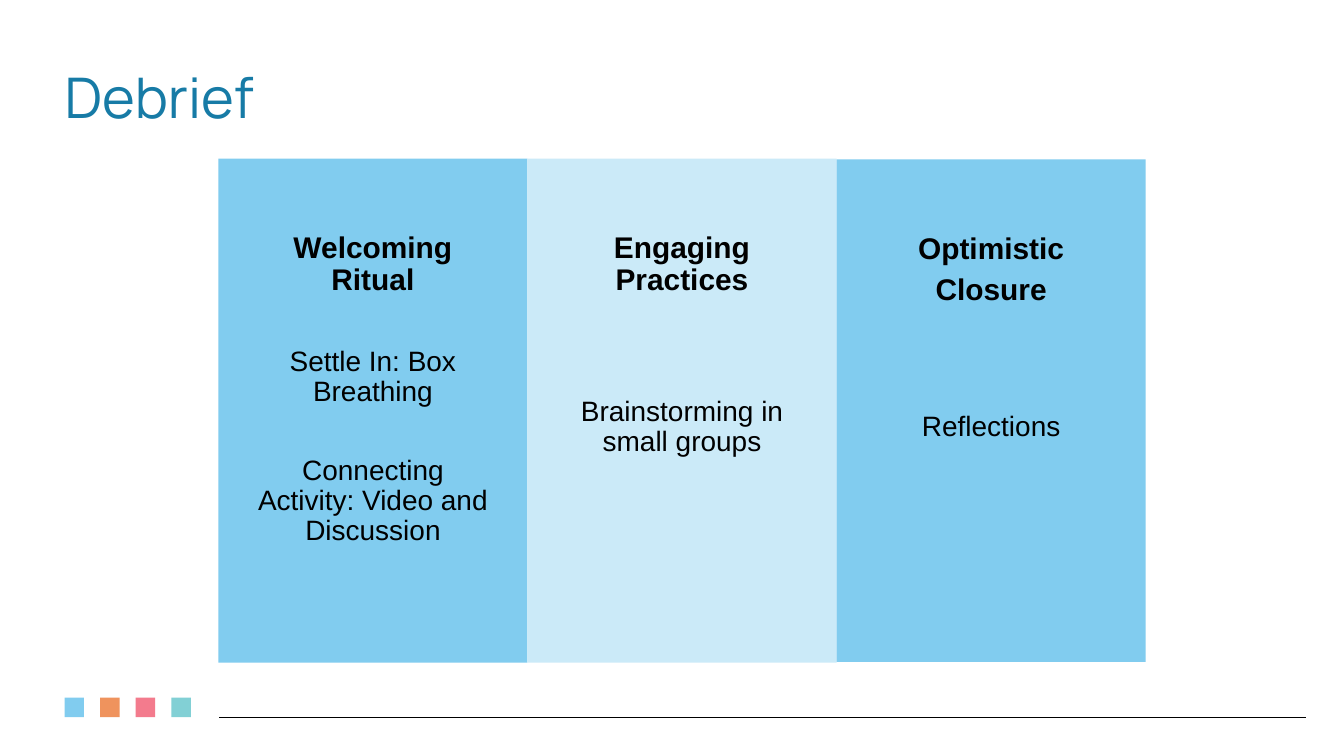
import pptx
import pptx.util
import pptx.dml.color
import pptx.enum.shapes
import pptx.enum.text
import pptx.oxml.ns
from lxml import etree

RGBColor = pptx.dml.color.RGBColor
Pt = pptx.util.Pt
ALIGN = pptx.enum.text.PP_ALIGN
ANCHOR = pptx.enum.text.MSO_ANCHOR
RECTANGLE = pptx.enum.shapes.MSO_SHAPE.RECTANGLE

EMU_PER_PX = 9144  # 100 px to the inch

BLACK = RGBColor(0x00, 0x00, 0x00)
TITLE_BLUE = RGBColor(0x17, 0x7B, 0xA6)
SKY = RGBColor(0x81, 0xCC, 0xEF)
PALE_SKY = RGBColor(0xCB, 0xEA, 0xF8)
ORANGE = RGBColor(0xEF, 0x93, 0x5D)
PINK = RGBColor(0xF3, 0x7B, 0x8D)
TEAL = RGBColor(0x82, 0xD0, 0xD5)

COLUMN_WIDTH = 460
# Fill, top, height, top inset, heading paragraphs, body paragraphs, gap in points
COLUMNS = [
    (SKY, 236, 750, 159, ["Welcoming Ritual"],
     ["Settle In: Box Breathing", "Connecting Activity: Video and Discussion"], 52),
    (PALE_SKY, 236, 750, 100, ["Engaging Practices"],
     ["Brainstorming in small groups"], 10),
    (SKY, 237, 748, 100, ["Optimistic", "Closure"], ["Reflections"], 10),
]


def px(length):
    return pptx.util.Emu(length * EMU_PER_PX)


def write_text(shape, paragraphs, size, color=BLACK, font="Arial", bold=False,
               align=ALIGN.CENTER, anchor=ANCHOR.TOP, insets=(0, 0, 0, 0), gap=10):
    """Insets are left, top, right, bottom in px; gap is in points."""
    frame = shape.text_frame
    frame.word_wrap = True
    frame.auto_size = pptx.enum.text.MSO_AUTO_SIZE.NONE
    frame.vertical_anchor = anchor
    (frame.margin_left, frame.margin_top,
     frame.margin_right, frame.margin_bottom) = map(px, insets)
    for index, text in enumerate(paragraphs):
        para = frame.add_paragraph() if index else frame.paragraphs[0]
        para.alignment = align
        para.line_spacing = 0.9
        para.space_before = Pt(gap if index else 0)
        span = para.add_run()
        span.text = text
        span.font.size = Pt(size)
        span.font.name = font
        span.font.bold = bold
        span.font.color.rgb = color


def add_rectangle(page, left, top, width, height, color):
    shape = page.shapes.add_shape(RECTANGLE, px(left), px(top), px(width), px(height))
    shape.shadow.inherit = False
    shape.fill.solid()
    shape.fill.fore_color.rgb = color
    shape.line.fill.background()
    return shape


def add_footer(page, left, top, width):
    """Four coloured squares followed by a thin rule."""
    side, pitch, rule_offset = 29, 53, 230
    for index, color in enumerate([SKY, ORANGE, PINK, TEAL]):
        add_rectangle(page, left + index * pitch, top, side, side, color)
    rule = page.shapes.add_connector(
        pptx.enum.shapes.MSO_CONNECTOR.STRAIGHT,
        px(left + rule_offset), px(top + side), px(left + width), px(top + side))
    rule.line.color.rgb = BLACK
    rule.line.width = Pt(0.75)
    etree.SubElement(rule._element.spPr, pptx.oxml.ns.qn("a:effectLst"))


def add_title(page, left, top, width, height):
    title = page.shapes.title
    title.left, title.top, title.width, title.height = map(px, (left, top, width, height))
    write_text(title, ["Debrief"], 60, color=TITLE_BLUE, font="Manrope", align=ALIGN.LEFT)


def add_column(page, left, top, width, height, color, top_inset, heading, body, gap):
    panel = add_rectangle(page, left, top, width, height, color)
    write_text(panel, body, 30, anchor=ANCHOR.MIDDLE,
               insets=(50, top_inset, 50, 50), gap=gap)
    side_margin = 63
    heading_box = page.shapes.add_textbox(
        px(left + side_margin), px(top + 110), px(width - 2 * side_margin), px(108))
    write_text(heading_box, heading, 32, bold=True)


def main():
    deck = pptx.Presentation()
    deck.slide_width, deck.slide_height = px(2000), px(1125)
    page = deck.slides.add_slide(deck.slide_layouts[5])
    add_footer(page, 96, 1038, 1847)
    add_title(page, 96, 104, 1712, 108)
    for index, (color, top, height, top_inset, heading, body, gap) in enumerate(COLUMNS):
        add_column(page, 325 + index * COLUMN_WIDTH, top, COLUMN_WIDTH, height,
                   color, top_inset, heading, body, gap)
    deck.save("out.pptx")


if __name__ == "__main__":
    main()
